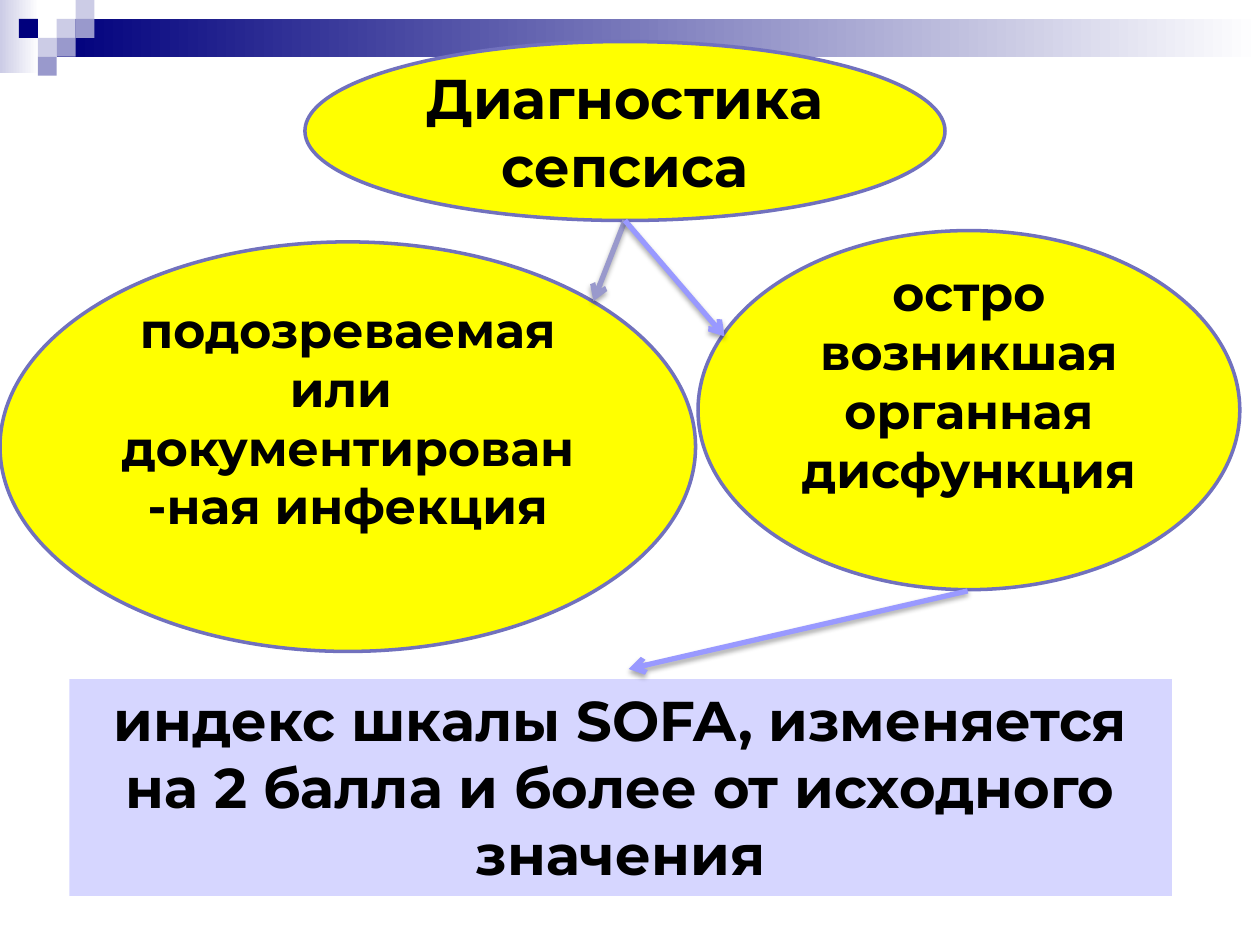
from lxml import etree
from pptx import Presentation
from pptx.dml.color import RGBColor
from pptx.enum.shapes import MSO_CONNECTOR, MSO_SHAPE
from pptx.enum.text import MSO_ANCHOR, MSO_AUTO_SIZE, PP_ALIGN
from pptx.oxml import parse_xml
from pptx.oxml.ns import nsdecls, qn
from pptx.util import Inches, Pt

FONT = "Montserrat"
BLACK, YELLOW, OUTLINE = "000000", "FFFF00", "7171BD"
NAVY, SLATE, PALE, WHITE = "00007D", "9999CC", "CCCCE6", "FFFFFF"
LAVENDER, VIOLET = "D6D6FF", "9999FF"
SHADOW = (
    f'<a:effectLst {nsdecls("a")}>'
    '<a:outerShdw blurRad="39370" dist="22860" dir="5400000" rotWithShape="0">'
    '<a:srgbClr val="000000"><a:alpha val="35000"/></a:srgbClr>'
    "</a:outerShdw></a:effectLst>"
)


def rgb(value):
    return RGBColor.from_string(value)


class Deck:
    def __init__(self, prs):
        self.s = prs.slides.add_slide(prs.slide_layouts[6])

    def shape(self, kind, box, color):
        sp = self.s.shapes.add_shape(kind, *map(Inches, box))
        sp.shadow.inherit = False
        sp.fill.solid()
        sp.fill.fore_color.rgb = rgb(color)
        sp.line.fill.background()
        return sp

    def gradient(self, box, start, end):
        sp = self.shape(MSO_SHAPE.RECTANGLE, box, start)
        sp.fill.gradient()
        sp.fill.gradient_angle = 0
        for stop, color, position in zip(sp.fill.gradient_stops, (start, end), (0, 1)):
            stop.color.rgb = rgb(color)
            stop.position = position

    def label(self, tf, lines, size):
        tf.word_wrap = True
        for i, line in enumerate(lines):
            p = tf.add_paragraph() if i else tf.paragraphs[0]
            p.text = line
            p.alignment = PP_ALIGN.CENTER
            p.font.name = FONT
            p.font.size = Pt(size)
            p.font.bold = True
            p.font.color.rgb = rgb(BLACK)

    def ellipse(self, box, lines, size, bottom=0.05):
        sp = self.shape(MSO_SHAPE.OVAL, box, YELLOW)
        sp.line.color.rgb = rgb(OUTLINE)
        sp.line.width = Pt(2)
        tf = sp.text_frame
        tf.vertical_anchor = MSO_ANCHOR.MIDDLE
        tf.margin_bottom = Inches(bottom)
        self.label(tf, lines, size)

    def text_box(self, box, lines, size, color):
        sp = self.s.shapes.add_textbox(*map(Inches, box))
        sp.fill.solid()
        sp.fill.fore_color.rgb = rgb(color)
        self.label(sp.text_frame, lines, size)
        sp.text_frame.auto_size = MSO_AUTO_SIZE.SHAPE_TO_FIT_TEXT

    def arrow(self, start, end, color):
        cx = self.s.shapes.add_connector(
            MSO_CONNECTOR.STRAIGHT, *map(Inches, start + end)
        )
        cx.line.color.rgb = rgb(color)
        cx.line.width = Pt(3)
        sp_pr = cx.element.spPr
        etree.SubElement(sp_pr.find(qn("a:ln")), qn("a:tailEnd"), type="arrow")
        sp_pr.append(parse_xml(SHADOW))


def main():
    prs = Presentation()
    prs.slide_width, prs.slide_height = Inches(10), Inches(7.5)
    deck = Deck(prs)

    deck.gradient((0, 0, 0.31, 0.58), PALE, WHITE)
    deck.gradient((0.45, 0.15, 9.55, 0.3), NAVY, WHITE)
    tile = 0.15
    mosaic = [
        (3, 1, PALE), (4, 0, PALE), (4, 1, SLATE), (2, 2, PALE),
        (1, 1, NAVY), (3, 2, SLATE), (2, 3, SLATE),
    ]
    for col, row, color in mosaic:
        deck.shape(MSO_SHAPE.RECTANGLE, (col * tile, row * tile, tile, tile), color)

    deck.ellipse((2.42, 0.33, 5.08, 1.42), ["Диагностика сепсиса"], 32)
    deck.text_box(
        (0.55, 5.39, 8.75, 1.72),
        ["индекс шкалы SOFA, изменяется на 2 балла и более от исходного значения"],
        32, LAVENDER,
    )
    deck.ellipse(
        (0, 1.92, 5.52, 3.25),
        ["подозреваемая или ", "документирован-ная инфекция"], 28, bottom=0.52,
    )
    deck.ellipse(
        (5.54, 1.83, 4.3, 2.85),
        ["остро возникшая органная дисфункция"], 28, bottom=0.52,
    )

    deck.arrow((4.96, 1.75), (4.71, 2.39), SLATE)
    deck.arrow((4.96, 1.75), (5.75, 2.67), VIOLET)
    deck.arrow((7.68, 4.69), (4.99, 5.31), VIOLET)

    prs.save("out.pptx")


if __name__ == "__main__":
    main()
